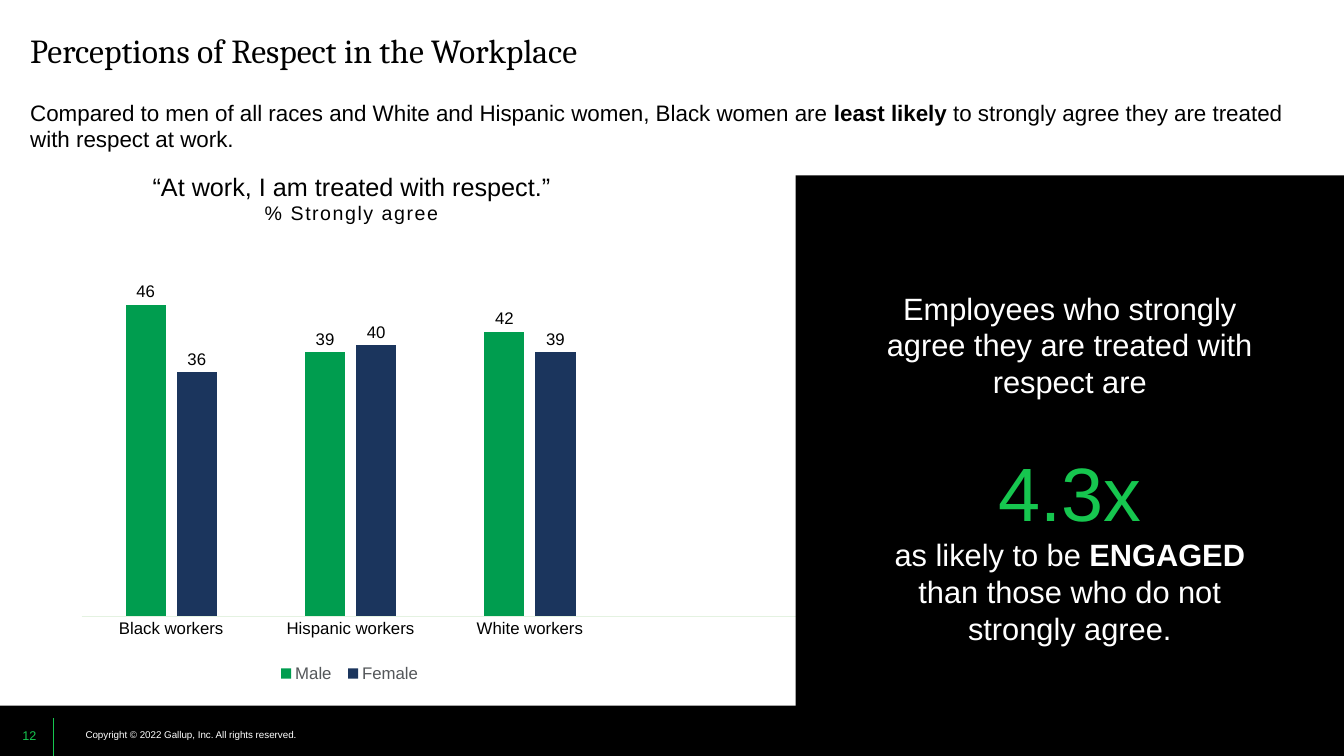
from dataclasses import dataclass

from lxml import etree
from pptx import Presentation
from pptx.chart.data import CategoryChartData
from pptx.dml.color import RGBColor
from pptx.enum.chart import XL_CHART_TYPE, XL_LABEL_POSITION, XL_LEGEND_POSITION, XL_TICK_MARK
from pptx.enum.shapes import MSO_CONNECTOR, MSO_SHAPE
from pptx.enum.text import MSO_ANCHOR, PP_ALIGN
from pptx.oxml.ns import qn
from pptx.util import Inches, Pt

COLUMNS = XL_CHART_TYPE.COLUMN_CLUSTERED
OUTSIDE = XL_LABEL_POSITION.OUTSIDE_END
BOTTOM = XL_LEGEND_POSITION.BOTTOM
NO_TICK = XL_TICK_MARK.NONE
STRAIGHT = MSO_CONNECTOR.STRAIGHT
RECTANGLE = MSO_SHAPE.RECTANGLE
TOP, MIDDLE = MSO_ANCHOR.TOP, MSO_ANCHOR.MIDDLE
LEFT, CENTER = PP_ALIGN.LEFT, PP_ALIGN.CENTER


@dataclass(frozen=True)
class Theme:
    black: str = "000000"
    white: str = "FFFFFF"
    bright_green: str = "16C64F"
    green: str = "009D4F"
    navy: str = "1B355D"
    axis: str = "E4F2E1"
    grey: str = "54575A"
    sans: str = "Arial"
    serif: str = "Cambria"
    copyright: float = 7
    page_number: float = 9
    label: float = 12
    subtitle: float = 14
    body: float = 16
    chart_title: float = 18
    callout: float = 22
    title: float = 24
    figure: float = 54


THEME = Theme()


@dataclass(frozen=True)
class Span:
    text: str
    size: float
    color: str = THEME.black
    font: str = THEME.sans
    bold: bool = False
    spacing: int = 0
    break_before: bool = False


@dataclass(frozen=True)
class Para:
    spans: tuple[Span, ...]
    align: PP_ALIGN = LEFT
    line_spacing: float = 1.0


@dataclass(frozen=True)
class TextBox:
    at: tuple[float, float, float, float]
    paras: tuple[Para, ...]
    insets: tuple[float, float, float, float] = (0.1, 0.05, 0.1, 0.05)
    anchor: MSO_ANCHOR = TOP
    wrap: bool = True


@dataclass(frozen=True)
class Series:
    name: str
    values: tuple
    color: str


PANELS = ((0, 7, 13.33, 0.5), (7.89, 1.74, 5.45, 5.36))
CATEGORIES = ("Black workers", "Hispanic workers", "White workers", "")
SERIES = (
    Series("Male", (46, 39, 42, None), THEME.green),
    Series("Female", (36, 40, 39, None), THEME.navy),
)
CHART_TITLE = (
    Para((Span("“At work, I am treated with respect.”", THEME.chart_title),), CENTER),
    Para((Span("% Strongly agree", THEME.subtitle, spacing=100),), CENTER),
)
TEXT_BOXES = (
    TextBox((0.75, 7.18, 3.75, 0.22),
            (Para((Span("Copyright © 2022 Gallup, Inc. All rights reserved.",
                        THEME.copyright, THEME.white),)),),
            anchor=MIDDLE, wrap=False),
    TextBox((0, 0, 13.33, 0.91),
            (Para((Span("Perceptions of Respect in the Workplace",
                        THEME.title, font=THEME.serif),)),),
            insets=(0.3, 0.35, 0.3, 0.15)),
    TextBox((0, 0.93, 13.33, 0.79),
            (Para((
                Span("Compared to men of all races and White and Hispanic women, "
                     "Black women are ", THEME.body),
                Span("least likely ", THEME.body, bold=True),
                Span("to strongly agree they are treated", THEME.body),
                Span("with respect at work.", THEME.body, break_before=True),
            )),),
            insets=(0.3, 0.05, 0.1, 0.2)),
    TextBox((0, 7.1, 0.53, 0.4),
            (Para((Span("12", THEME.page_number, THEME.bright_green),), CENTER),),
            insets=(0.15, 0.05, 0.1, 0.05), anchor=MIDDLE),
    TextBox((8.6, 2.82, 4.02, 3.69), (
        Para((Span("Employees who strongly agree they are treated with respect are",
                   THEME.callout, THEME.white),), CENTER),
        Para((Span("4.3x", THEME.figure, THEME.bright_green),), CENTER, 1.5),
        Para((
            Span("as likely to be ", THEME.callout, THEME.white),
            Span("ENGAGED ", THEME.callout, THEME.white, bold=True),
            Span("than those who do not strongly agree.", THEME.callout, THEME.white),
        ), CENTER),
    )),
)


def set_font(font, *, size: float, color: str = THEME.black,
             name: str = THEME.sans, bold: bool = False) -> None:
    font.size, font.name, font.bold = Pt(size), name, bold
    font.color.rgb = RGBColor.from_string(color)


def write_text(frame, paras: tuple[Para, ...]) -> None:
    for index, para in enumerate(paras):
        paragraph = frame.add_paragraph() if index else frame.paragraphs[0]
        paragraph.alignment = para.align
        paragraph.line_spacing = para.line_spacing
        for span in para.spans:
            if span.break_before:
                paragraph.add_line_break()
            run = paragraph.add_run()
            run.text = span.text
            set_font(run.font, size=span.size, color=span.color,
                     name=span.font, bold=span.bold)
            if span.spacing:
                run.font._element.set("spc", str(span.spacing))


def add_text(page, text: TextBox) -> None:
    box = page.shapes.add_textbox(*map(Inches, text.at))
    frame = box.text_frame
    frame.word_wrap = text.wrap
    frame.vertical_anchor = text.anchor
    (frame.margin_left, frame.margin_top,
     frame.margin_right, frame.margin_bottom) = map(Inches, text.insets)
    write_text(frame, text.paras)


def add_panel(page, at: tuple[float, float, float, float]) -> None:
    panel = page.shapes.add_shape(RECTANGLE, *map(Inches, at))
    panel.shadow.inherit = False
    panel.fill.solid()
    panel.fill.fore_color.rgb = RGBColor.from_string(THEME.black)
    panel.line.fill.background()


def add_divider(page) -> None:
    divider = page.shapes.add_connector(
        STRAIGHT, Inches(0.53), Inches(7.5), Inches(0.53), Inches(7.12))
    divider.line.color.rgb = RGBColor.from_string(THEME.bright_green)
    divider.line.width = Pt(0.75)
    etree.SubElement(divider._element.spPr, qn("a:effectLst"))


def set_layout(parent, index: int, inner: bool = False, **fractions: float) -> None:
    for old in parent.findall(qn("c:layout")):
        parent.remove(old)
    layout = etree.Element(qn("c:layout"))
    manual = etree.SubElement(layout, qn("c:manualLayout"))
    settings = {"layoutTarget": "inner"} if inner else {}
    settings |= {"xMode": "edge", "yMode": "edge"} | fractions
    for tag, value in settings.items():
        etree.SubElement(manual, qn(f"c:{tag}")).set("val", str(value))
    parent.insert(index, layout)


def add_respect_chart(page) -> None:
    data = CategoryChartData()
    data.categories = CATEGORIES
    for series in SERIES:
        data.add_series(series.name, series.values)
    chart = page.shapes.add_chart(
        COLUMNS, *map(Inches, (0.51, 1.22, 7.49, 5.69)), data).chart
    set_font(chart.font, size=THEME.label)

    chart.has_title = True
    write_text(chart.chart_title.text_frame, CHART_TITLE)
    set_layout(chart.chart_title._element, 1, x=0.13, y=0.08)
    chart.has_legend = True
    chart.legend.position = BOTTOM
    chart.legend.include_in_layout = False
    set_font(chart.legend.font, size=THEME.label, color=THEME.grey)
    set_layout(chart.legend._element, 1, x=0.29, y=0.93, w=0.21, h=0.06)
    set_layout(chart._chartSpace.chart.plotArea, 0, inner=True,
               x=0.04, y=0.27, w=0.95, h=0.59)

    chart.value_axis.visible = False
    chart.value_axis.has_major_gridlines = False
    chart.value_axis.minimum_scale, chart.value_axis.maximum_scale = 0, 50
    axis = chart.category_axis
    axis.major_tick_mark = NO_TICK
    axis.format.line.color.rgb = RGBColor.from_string(THEME.axis)
    axis.format.line.width = Pt(0.75)
    set_font(axis.tick_labels.font, size=THEME.label)

    plot = chart.plots[0]
    plot.gap_width, plot.overlap, plot.vary_by_categories = 219, -27, False
    for bars, series in zip(plot.series, SERIES):
        bars.format.fill.solid()
        bars.format.fill.fore_color.rgb = RGBColor.from_string(series.color)
        labels = bars.data_labels
        labels.show_value = True
        labels.position = OUTSIDE
        set_font(labels.font, size=THEME.label)


def main() -> None:
    deck = Presentation()
    deck.slide_width, deck.slide_height = Inches(13.33), Inches(7.5)
    page = deck.slides.add_slide(deck.slide_layouts[6])
    footer, callout = PANELS
    add_panel(page, footer)
    add_divider(page)
    add_respect_chart(page)
    add_panel(page, callout)
    for text in TEXT_BOXES:
        add_text(page, text)
    deck.save("out.pptx")


if __name__ == "__main__":
    main()
